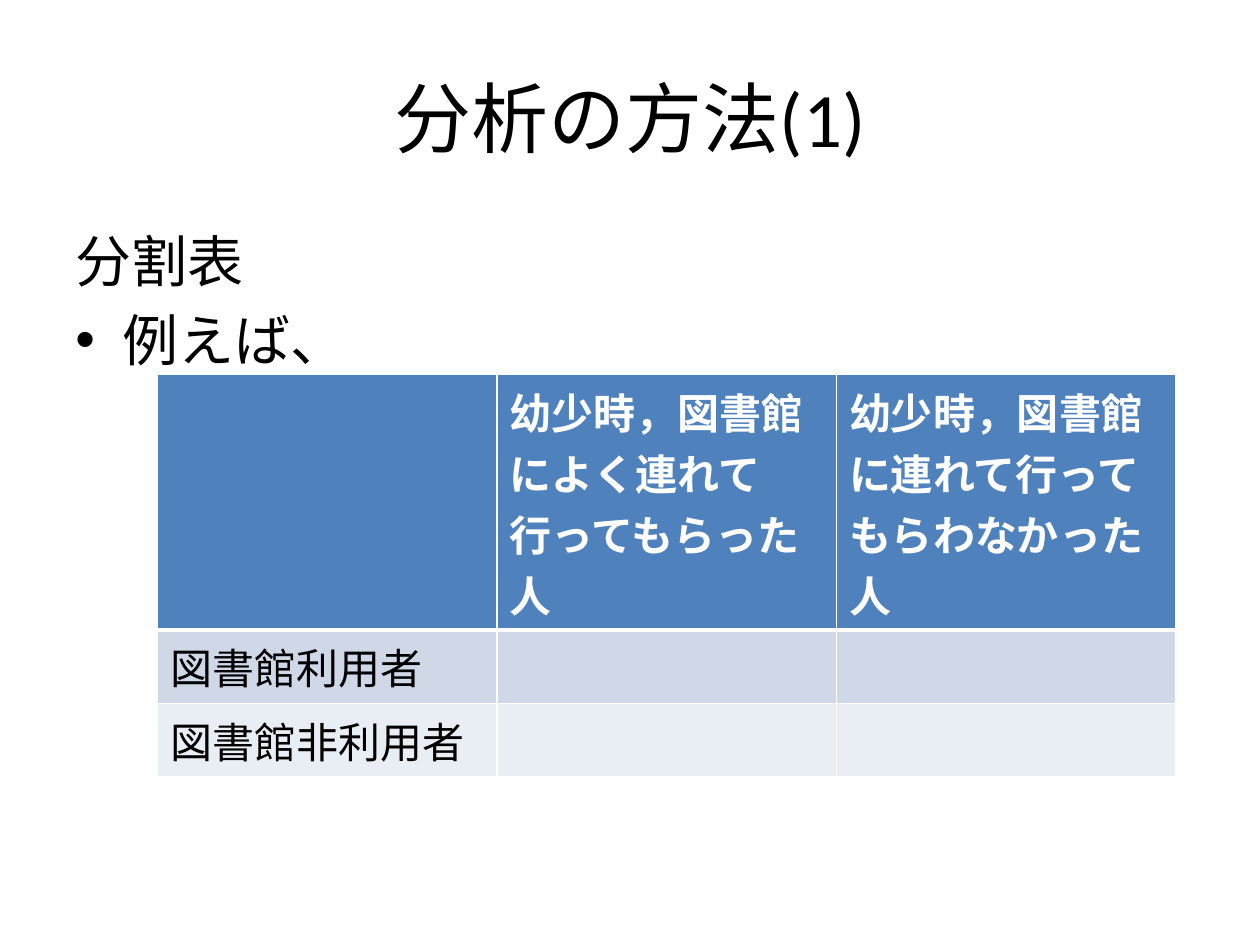
from dataclasses import dataclass

import pptx
import pptx.dml.color
import pptx.enum.text
import pptx.oxml
import pptx.oxml.ns
import pptx.util

Pt = pptx.util.Pt
COLORS = {
    "text": "000000",
    "white": "FFFFFF",
    "header": "4F81BD",
    "odd_row": "D0D8E8",
    "even_row": "E9EDF4",
}
FONT = "Calibri"
COLUMN_WIDTH = 194
BODY_INDENT = 27


@dataclass
class TableRow:
    texts: tuple[str, str, str]
    height: float
    fill: str
    color: str = "text"
    bold: bool = False
    top_line: float = 1
    bottom_line: float = 1


ROWS = [
    TableRow(
        ("", "幼少時，図書館によく連れて行ってもらった人",
         "幼少時，図書館に連れて行ってもらわなかった人"),
        146, "header", color="white", bold=True, bottom_line=3,
    ),
    TableRow(("図書館利用者", "", ""), 42, "odd_row", top_line=3),
    TableRow(("図書館非利用者", "", ""), 42, "even_row"),
]


def rgb(name: str) -> pptx.dml.color.RGBColor:
    return pptx.dml.color.RGBColor.from_string(COLORS[name])


def format_font(font, size: float, color: str = "text", bold: bool = False) -> None:
    for attribute, value in {"name": FONT, "size": Pt(size), "bold": bold}.items():
        setattr(font, attribute, value)
    font.color.rgb = rgb(color)


def place(shape, left: float, top: float, width: float, height: float) -> None:
    box = {"left": left, "top": top, "width": width, "height": height}
    for attribute, value in box.items():
        setattr(shape, attribute, Pt(value))


def add_borders(cell, row: TableRow) -> None:
    widths = {"lnL": 1, "lnR": 1, "lnT": row.top_line, "lnB": row.bottom_line}
    properties = cell._tc.get_or_add_tcPr()
    for position, (tag, width) in enumerate(widths.items()):
        properties.insert(position, pptx.oxml.parse_xml(
            f'<a:{tag} {pptx.oxml.ns.nsdecls("a")} w="{Pt(width)}"><a:solidFill>'
            f'<a:srgbClr val="{COLORS["white"]}"/></a:solidFill></a:{tag}>'))


def add_body(slide) -> None:
    box = slide.shapes.add_textbox(Pt(36), Pt(126), Pt(648), Pt(356.4))
    frame = box.text_frame
    frame.word_wrap = True
    frame.text = "分割表\n例えば、"
    for paragraph in frame.paragraphs:
        paragraph.space_before = Pt(6.4)
        format_font(paragraph.runs[0].font, 32)

    # Bullet with a hanging indent on the second line
    properties = frame.paragraphs[1]._p.get_or_add_pPr()
    properties.set("marL", str(Pt(BODY_INDENT)))
    properties.set("indent", str(Pt(-BODY_INDENT)))
    for tag, attribute, value in (("buFont", "typeface", "Arial"), ("buChar", "char", "•")):
        properties.append(pptx.oxml.parse_xml(
            f'<a:{tag} {pptx.oxml.ns.nsdecls("a")} {attribute}="{value}"/>'))


def add_contingency_table(slide, rows: list[TableRow]) -> None:
    columns = len(rows[0].texts)
    height = sum(row.height for row in rows)
    table = slide.shapes.add_table(
        len(rows), columns, Pt(90), Pt(214), Pt(COLUMN_WIDTH * columns), Pt(height)).table
    for column in table.columns:
        column.width = Pt(COLUMN_WIDTH)
    for table_row, row in zip(table.rows, rows):
        table_row.height = Pt(row.height)
        for cell, text in zip(table_row.cells, row.texts):
            cell.fill.solid()
            cell.fill.fore_color.rgb = rgb(row.fill)
            add_borders(cell, row)
            if text:
                cell.text = text
                format_font(cell.text_frame.paragraphs[0].runs[0].font,
                            24, row.color, row.bold)


def main() -> None:
    presentation = pptx.Presentation()
    presentation.slide_width, presentation.slide_height = Pt(720), Pt(540)
    slide = presentation.slides.add_slide(presentation.slide_layouts[5])

    # Title
    title = slide.shapes.title
    place(title, 36, 21.6, 648, 90)
    title.text_frame.text = "分析の方法(1)"
    title.text_frame.vertical_anchor = pptx.enum.text.MSO_ANCHOR.MIDDLE
    heading = title.text_frame.paragraphs[0]
    heading.alignment = pptx.enum.text.PP_ALIGN.CENTER
    format_font(heading.runs[0].font, 44)

    # Body and table
    add_body(slide)
    add_contingency_table(slide, ROWS)

    presentation.save("out.pptx")


if __name__ == "__main__":
    main()
